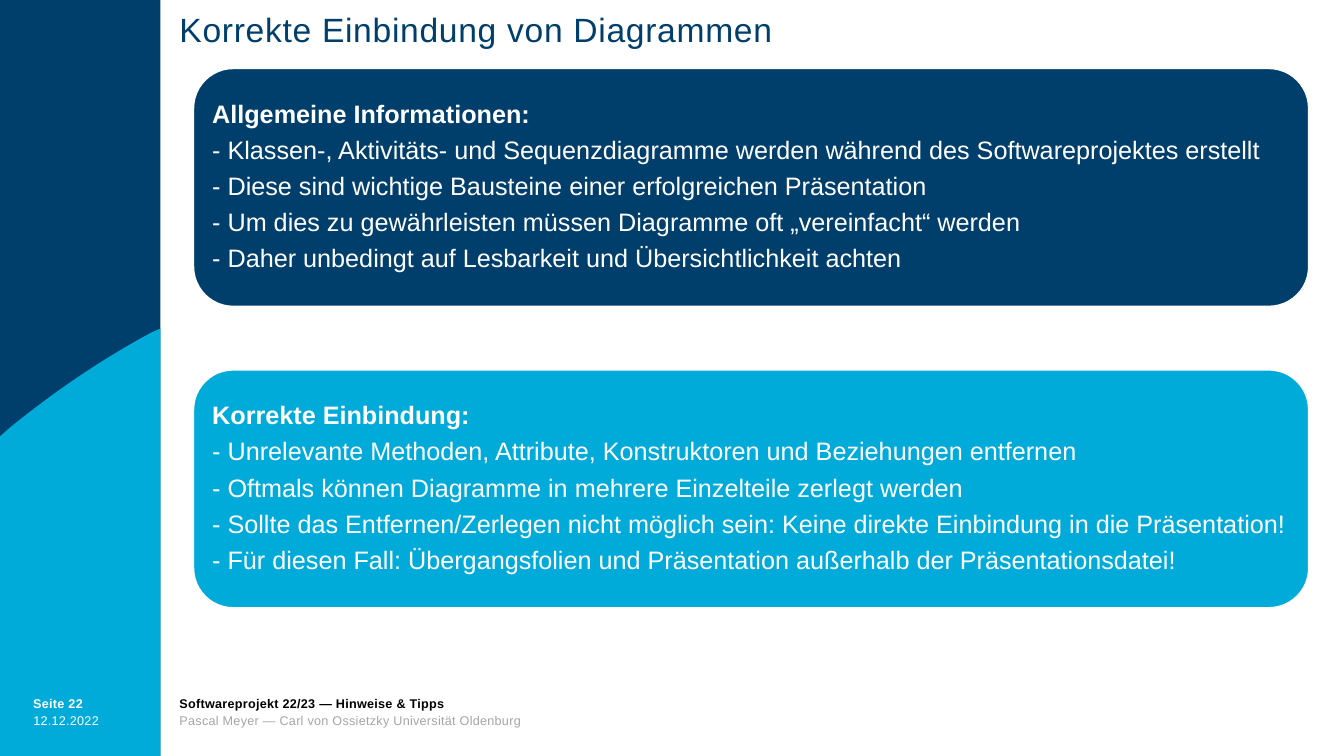
"""Build the slide on embedding diagrams correctly."""
import pptx
import pptx.util
import pptx.dml.color
import pptx.enum.shapes
import pptx.enum.text

Inches, Pt = pptx.util.Inches, pptx.util.Pt
SHAPE = pptx.enum.shapes.MSO_SHAPE
ANCHOR = pptx.enum.text.MSO_ANCHOR
NAVY, CYAN, WHITE, BLACK, GREY = "003F6B", "00ABDA", "FFFFFF", "000000", "A5A5A5"

TITLE = "Korrekte Einbindung von Diagrammen"
CARDS = [
    (NAVY, "Allgemeine Informationen:", [
        "- Klassen-, Aktivitäts- und Sequenzdiagramme werden während des Softwareprojektes erstellt",
        "- Diese sind wichtige Bausteine einer erfolgreichen Präsentation",
        "- Um dies zu gewährleisten müssen Diagramme oft „vereinfacht“ werden",
        "- Daher unbedingt auf Lesbarkeit und Übersichtlichkeit achten",
    ]),
    (CYAN, "Korrekte Einbindung:", [
        "- Unrelevante Methoden, Attribute, Konstruktoren und Beziehungen entfernen",
        "- Oftmals können Diagramme in mehrere Einzelteile zerlegt werden",
        "- Sollte das Entfernen/Zerlegen nicht möglich sein: Keine direkte Einbindung in die Präsentation!",
        "- Für diesen Fall: Übergangsfolien und Präsentation außerhalb der Präsentationsdatei!",
    ]),
]
NOTES = [
    ((0.33, 6.89, 1.14, 0.17), [("Seite 22", WHITE, True)]),
    ((0.33, 7.06, 0.98, 0.23), [("12.12.2022", WHITE, False)]),
    ((1.78, 6.89, 9.41, 0.4), [
        ("Softwareprojekt 22/23 — Hinweise & Tipps", BLACK, True),
        ("Pascal Meyer — Carl von Ossietzky Universität Oldenburg", GREY, False),
    ]),
]
SIDE = 1.59
CURVE = [(0.09, 4.25), (0.53, 3.89), (1, 3.57), (1.5, 3.3)]
CARD = {"left": 1.92, "top": 0.68, "width": 11.06, "height": 2.36, "step": 2.99}


def color(code):
    return pptx.dml.color.RGBColor.from_string(code)


def apply(item, values):
    for name, value in values.items():
        setattr(item, name, value)


def paint(shape, code, edge=None):
    shape.shadow.inherit = False
    shape.fill.solid()
    shape.fill.fore_color.rgb = color(code)
    if edge:
        shape.line.color.rgb = color(edge)
        shape.line.width = Pt(1)
    else:
        shape.line.fill.background()


def write(frame, lines, size, para, inset=0, anchor=ANCHOR.TOP, wrap=True, spc=None):
    pad = Inches(inset)
    apply(frame, {"margin_left": pad, "margin_right": pad, "margin_top": pad,
                  "margin_bottom": pad, "vertical_anchor": anchor, "word_wrap": wrap,
                  "auto_size": pptx.enum.text.MSO_AUTO_SIZE.NONE})
    for i, (text, code, bold) in enumerate(lines):
        p = frame.add_paragraph() if i else frame.paragraphs[0]
        apply(p, {"alignment": pptx.enum.text.PP_ALIGN.LEFT, "space_before": Pt(0), **para})
        run = p.add_run()
        run.text = text
        apply(run.font, {"name": "Arial", "size": Pt(size), "bold": bold})
        run.font.color.rgb = color(code)
        if spc:
            run._r.get_or_add_rPr().set("spc", str(spc))


def bezier(points, count=24):
    a, b, c, d = points
    for i in range(count + 1):
        t = i / count
        u = 1 - t
        yield tuple(u**3 * a[k] + 3 * u * u * t * b[k] + 3 * u * t * t * c[k] + t**3 * d[k]
                    for k in (0, 1))


def main():
    deck = pptx.Presentation()
    deck.slide_width, deck.slide_height = Inches(13.33), Inches(7.5)
    slide = deck.slides.add_slide(deck.slide_layouts[5])
    shapes = slide.shapes

    bar = shapes.add_shape(SHAPE.RECTANGLE, 0, 0, Inches(SIDE), Inches(7.5))
    paint(bar, NAVY)
    edge = [(SIDE, 3.26), (SIDE, 7.5), (0, 7.5), (0, 4.33), *bezier(CURVE)]
    start, *rest = [(Inches(x), Inches(y)) for x, y in edge]
    pen = shapes.build_freeform(*start)
    pen.add_line_segments(rest, close=True)
    paint(pen.convert_to_shape(), CYAN)

    for box, lines in NOTES:
        note = shapes.add_textbox(*map(Inches, box))
        write(note.text_frame, lines, 9, {"line_spacing": Pt(12)}, wrap=False, spc=20)

    title = shapes.title
    apply(title, {"left": Inches(1.78), "top": Inches(0.13),
                  "width": Inches(9.41), "height": Inches(0.48)})
    write(title.text_frame, [(TITLE, NAVY, False)], 24, {"line_spacing": 0.9}, spc=50)

    for i, (fill, head, points) in enumerate(CARDS):
        card = shapes.add_shape(
            SHAPE.ROUNDED_RECTANGLE, Inches(CARD["left"]),
            Inches(CARD["top"] + i * CARD["step"]),
            Inches(CARD["width"]), Inches(CARD["height"]))
        paint(card, fill, WHITE)
        lines = [(head, WHITE, True)] + [(point, WHITE, False) for point in points]
        write(card.text_frame, lines, 18, {"line_spacing": 0.9, "space_after": Pt(6.3)},
              inset=0.07, anchor=ANCHOR.MIDDLE)

    deck.save("out.pptx")


if __name__ == "__main__":
    main()
